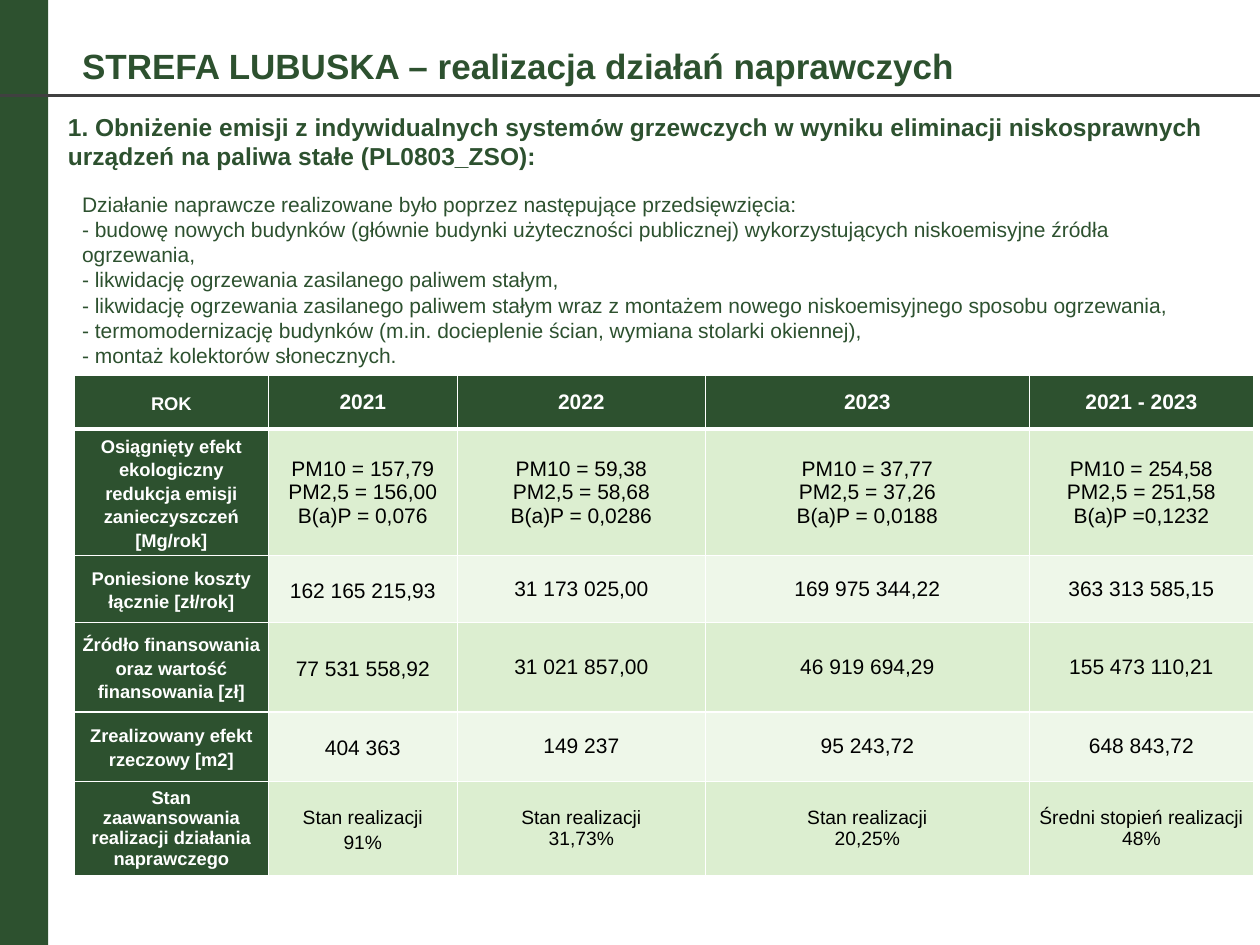
from lxml.etree import SubElement
from pptx import Presentation
from pptx.dml.color import RGBColor
from pptx.enum.shapes import MSO_CONNECTOR, MSO_SHAPE
from pptx.enum.text import MSO_ANCHOR, MSO_AUTO_SIZE, PP_ALIGN
from pptx.oxml import parse_xml
from pptx.oxml.ns import nsdecls, qn
from pptx.util import Cm, Pt

GREEN, WHITE, BLACK, GREY = "2D512F", "FFFFFF", "000000", "404040"
BANDS = ["DCEED0", "EEF7E9"]


def color(hex_text):
    return RGBColor.from_string(hex_text)


def format_runs(paragraph, size, hex_text, bold=False):
    for run in paragraph.runs:
        run.font.name = "Arial"
        run.font.size = Pt(size)
        run.font.bold = bold
        run.font.color.rgb = color(hex_text)


presentation = Presentation()
presentation.slide_width, presentation.slide_height = Cm(25.4), Cm(19.05)
slide = presentation.slides.add_slide(presentation.slide_layouts[1])

# Green side band
band = slide.shapes.add_shape(MSO_SHAPE.RECTANGLE, Cm(-0.3), Cm(0), Cm(1.27), Cm(19.4))
band.shadow.inherit = False
band.fill.solid()
band.fill.fore_color.rgb = color(GREEN)
band.line.fill.background()

# Rule under the title
rule = slide.shapes.add_connector(MSO_CONNECTOR.STRAIGHT, Cm(26.11), Cm(1.93), Cm(-0.71), Cm(1.93))
rule.line.color.rgb = color(GREY)
rule.line.width = Pt(1.5)
SubElement(rule._element.spPr, qn("a:effectLst"))

# Title
title = slide.shapes.title
title.left, title.top, title.width, title.height = Cm(1.4), Cm(0.71), Cm(22.1), Cm(1.22)
title.text_frame.text = "STREFA LUBUSKA – realizacja działań naprawczych"
title.text_frame.auto_size = MSO_AUTO_SIZE.NONE
title.text_frame.vertical_anchor = MSO_ANCHOR.MIDDLE
title.text_frame.paragraphs[0].alignment = PP_ALIGN.LEFT
format_runs(title.text_frame.paragraphs[0], 20, GREEN, True)

# Section heading
heading = slide.shapes.add_textbox(Cm(1.12), Cm(2.08), Cm(23.4), Cm(2.24))
heading.text_frame.word_wrap = True
heading.text_frame.margin_top = Cm(0.18)
paragraph = heading.text_frame.paragraphs[0]
for text in ["1. Obniżenie emisji z indywidualnych system", "ó",
             "w grzewczych w wyniku eliminacji niskosprawnych urządzeń na paliwa stałe (PL0803_ZSO):"]:
    paragraph.add_run().text = text
format_runs(paragraph, 14, GREEN, True)
paragraph.runs[1].font.name = "Calibri"

# List of measures
measures = slide.placeholders[1]
measures.left, measures.top, measures.width, measures.height = Cm(1.4), Cm(3.73), Cm(22.5), Cm(3.84)
measures.text_frame.text = "\n".join([
    "Działanie naprawcze realizowane było poprzez następujące przedsięwzięcia:",
    "- budowę nowych budynków (głównie budynki użyteczności publicznej) "
    "wykorzystujących niskoemisyjne źródła ogrzewania,",
    "- likwidację ogrzewania zasilanego paliwem stałym,",
    "- likwidację ogrzewania zasilanego paliwem stałym wraz z montażem nowego "
    "niskoemisyjnego sposobu ogrzewania,",
    "- termomodernizację budynków (m.in. docieplenie ścian, wymiana stolarki okiennej),",
    "- montaż kolektorów słonecznych.",
])
measures.text_frame.auto_size = MSO_AUTO_SIZE.NONE
for paragraph in measures.text_frame.paragraphs:
    paragraph.space_before = Pt(0)
    format_runs(paragraph, 12, GREEN)
    properties = paragraph._p.get_or_add_pPr()
    properties.set("marL", "0")
    properties.set("indent", "0")
    SubElement(properties, qn("a:buNone"))

# Results table
rows = [
    ["ROK", "2021", "2022", "2023", "2021 - 2023"],
    ["Osiągnięty efekt ekologiczny redukcja emisji zanieczyszczeń [Mg/rok]",
     "PM10 = 157,79\nPM2,5 = 156,00\nB(a)P = 0,076",
     "PM10 = 59,38\nPM2,5 = 58,68\nB(a)P = 0,0286",
     "PM10 = 37,77\nPM2,5 = 37,26\nB(a)P = 0,0188",
     "PM10 = 254,58\nPM2,5 = 251,58\nB(a)P =0,1232"],
    ["Poniesione koszty łącznie [zł/rok]",
     "162 165 215,93", "31 173 025,00", "169 975 344,22", "363 313 585,15"],
    ["Źródło finansowania oraz wartość finansowania [zł]",
     "77 531 558,92", "31 021 857,00", "46 919 694,29", "155 473 110,21"],
    ["Zrealizowany efekt rzeczowy [m2]", "404 363", "149 237", "95 243,72", "648 843,72"],
    ["Stan zaawansowania realizacji działania naprawczego",
     "Stan realizacji\n91%", "Stan realizacji\n31,73%", "Stan realizacji\n20,25%",
     "Średni stopień realizacji\n48%"],
]
column_widths = [3.91, 3.81, 5, 6.53, 4.52]
row_heights = [1.08, 2.36, 1.35, 1.8, 1.4, 1.9]
last_row = len(rows) - 1
table = slide.shapes.add_table(len(rows), len(column_widths), Cm(1.5), Cm(7.57),
                               Cm(sum(column_widths)), Cm(sum(row_heights))).table
table.horz_banding = False
for column, width in zip(table.columns, column_widths):
    column.width = Cm(width)

for row_index, texts in enumerate(rows):
    table.rows[row_index].height = Cm(row_heights[row_index])
    for column_index, text in enumerate(texts):
        cell = table.cell(row_index, column_index)
        is_header = row_index == 0 or column_index == 0
        is_loose = (column_index == 0 and row_index < last_row) or (column_index == 1 and row_index > 1)
        size = 10.5 if column_index == 0 else 11 if row_index == last_row else 12
        cell.text_frame.text = text
        cell.vertical_anchor = MSO_ANCHOR.MIDDLE
        cell.margin_left = cell.margin_right = Cm(0.13)
        cell.margin_top = cell.margin_bottom = Cm(0)
        cell.fill.solid()
        cell.fill.fore_color.rgb = color(GREEN if is_header else BANDS[(row_index - 1) % 2])
        for paragraph in cell.text_frame.paragraphs:
            paragraph.alignment = PP_ALIGN.CENTER
            paragraph.line_spacing = 1.15 if is_loose else 1.0
            format_runs(paragraph, size, WHITE if is_header else BLACK, is_header)

        # White borders, thicker under the header row
        for position, side in enumerate("LRTB"):
            is_thick = (row_index, side) in [(0, "B"), (1, "T")]
            border = parse_xml(
                f'<a:ln{side} {nsdecls("a")} w="{Pt(3 if is_thick else 1)}">'
                f'<a:solidFill><a:srgbClr val="{WHITE}"/></a:solidFill></a:ln{side}>')
            cell._tc.get_or_add_tcPr().insert(position, border)

presentation.save("out.pptx")
